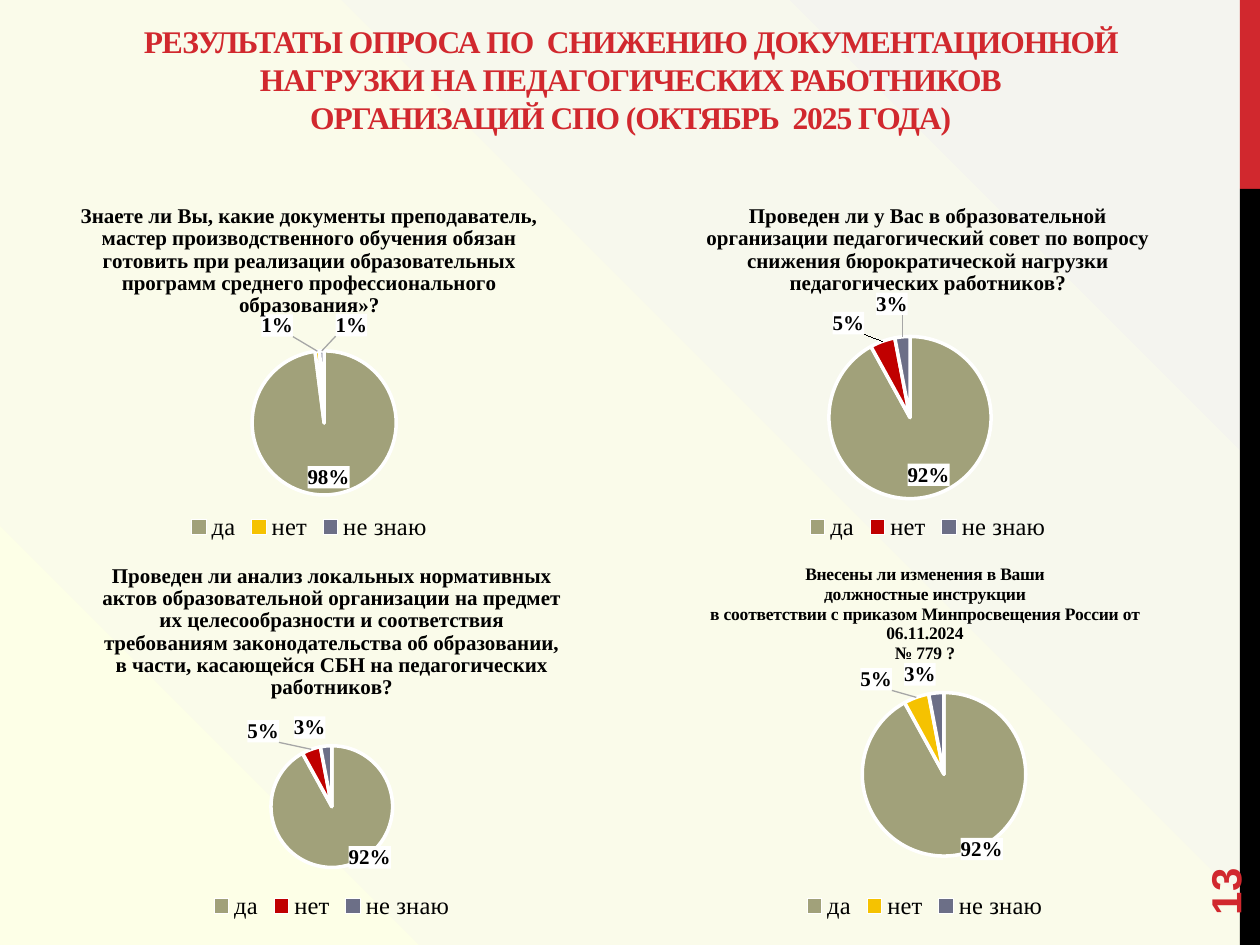
"""Build a slide with four survey pie charts."""
from copy import deepcopy

from pptx import Presentation
from pptx.chart.data import CategoryChartData
from pptx.dml.color import RGBColor
from pptx.enum.chart import XL_CHART_TYPE, XL_LABEL_POSITION, XL_LEGEND_POSITION
from pptx.enum.shapes import MSO_SHAPE
from pptx.enum.text import MSO_ANCHOR, PP_ALIGN
from pptx.oxml import parse_xml
from pptx.oxml.ns import nsdecls, qn
from pptx.util import Pt

RED = RGBColor(0xD1, 0x28, 0x2E)
BLACK = RGBColor(0, 0, 0)
WHITE = RGBColor(255, 255, 255)
OLIVE = RGBColor(0xA1, 0xA1, 0x7A)
GOLD = RGBColor(0xF5, 0xC2, 0x01)
DARK = RGBColor(0xC0, 0, 0)
SLATE = RGBColor(0x6C, 0x6F, 0x87)
GRAY = RGBColor(0xA6, 0xA6, 0xA6)
STOPS = ((0, RGBColor(0xFD, 0xFF, 0xE7)), (38, RGBColor(0xFA, 0xFB, 0xEA)),
         (99, RGBColor(0xF4, 0xF4, 0xEF)))

SERIF = "Times New Roman"
HEAD = ("РЕЗУЛЬТАТЫ ОПРОСА ПО  СНИЖЕНИЮ ДОКУМЕНТАЦИОННОЙ НАГРУЗКИ НА "
        "ПЕДАГОГИЧЕСКИХ РАБОТНИКОВ\nОРГАНИЗАЦИЙ СПО (ОКТЯБРЬ  2025 ГОДА)")
MOST = (0.92, 0.05, 0.03)
CHARTS = (
    dict(text="Знаете ли Вы, какие документы преподаватель, мастер производственного "
              "обучения обязан готовить при реализации образовательных программ "
              "среднего профессионального образования»?",
         box=(6.5, 105.8, 340.5, 206), area=(0.07, 0.46, 0.91, 0.4), size=12,
         vals=(0.98, 0.01, 0.01), no=GOLD, moves={1: (-0.04, -0.02), 2: (0.05, -0.02)}),
    dict(text="Проведен ли у Вас в образовательной организации педагогический совет "
              "по вопросу снижения бюрократической нагрузки педагогических работников?",
         box=(360, 105.8, 340.5, 206), area=(0.01, 0.42, 0.92, 0.45), size=12,
         vals=MOST, no=DARK, moves={2: (0.01, -0.04)}),
    dict(text="Проведен ли анализ локальных нормативных актов образовательной "
              "организации на предмет их целесообразности и соответствия требованиям "
              "законодательства об образовании, в части, касающейся СБН на "
              "педагогических работников?",
         box=(19.4, 311, 340.5, 217.4), area=(0, 0.53, 1, 0.32), size=12,
         vals=MOST, no=DARK, moves={0: (0, -0.07), 1: (-0.05, 0)}),
    dict(text="Внесены ли изменения в Ваши\nдолжностные инструкции\nв соответствии с "
              "приказом Минпросвещения России от 06.11.2024\n№ 779 ?",
         box=(371.5, 311, 314, 217.4), area=(0.09, 0.39, 0.89, 0.43), size=10,
         vals=MOST, no=GOLD, moves={0: (-0.01, -0.06), 1: (-0.04, 0)}),
)


def style(font, tone=BLACK, **vals):
    for key, val in vals.items():
        setattr(font, key, val)
    font.color.rgb = tone


def shade(slide):
    stops = "".join(f'<a:gs pos="{pos * 1000}"><a:srgbClr val="{tone}"/></a:gs>'
                    for pos, tone in STOPS)
    slide.element.find(qn("p:cSld")).insert(0, parse_xml(
        f'<p:bg {nsdecls("p", "a")}><p:bgPr><a:gradFill rotWithShape="1">'
        f'<a:gsLst>{stops}</a:gsLst><a:path path="circle">'
        '<a:fillToRect t="100000" r="100000"/></a:path></a:gradFill>'
        '<a:effectLst/></p:bgPr></p:bg>'))


def add_bar(slide, top, high, tone):
    bar = slide.shapes.add_shape(MSO_SHAPE.RECTANGLE, Pt(708.5), Pt(top), Pt(11.5), Pt(high))
    bar.shadow.inherit = False
    bar.fill.solid()
    bar.fill.fore_color.rgb = tone
    bar.line.fill.background()


def add_text(slide, box, text, form, side, **font):
    shape = slide.shapes.add_textbox(*map(Pt, box))
    frame = shape.text_frame
    for key, val in form.items():
        setattr(frame, key, val)
    frame.text = text
    for para in frame.paragraphs:
        para.alignment = side
        for run in para.runs:
            style(run.font, RED, bold=True, **font)
    return shape


def place(vals, inner=False):
    mode = '<c:layoutTarget val="inner"/>' * inner
    mode += '<c:xMode val="edge"/><c:yMode val="edge"/>' * inner
    spots = "".join(f'<c:{key} val="{val}"/>' for key, val in zip("xywh", vals))
    return parse_xml(f'<c:layout {nsdecls("c")}><c:manualLayout>{mode}{spots}'
                     '</c:manualLayout></c:layout>')


def add_marks(series, moves):
    marks = series.data_labels
    for key, val in dict(show_value=True, number_format="0%", position=XL_LABEL_POSITION.BEST_FIT,
                         number_format_is_linked=False).items():
        setattr(marks, key, val)
    style(marks.font, size=Pt(12), bold=True, name=SERIF)
    root = series._element.find(qn("c:dLbls"))
    root.find(qn("c:txPr")).addprevious(parse_xml(
        f'<c:spPr {nsdecls("c", "a")}><a:solidFill><a:srgbClr val="{WHITE}"/>'
        '</a:solidFill></c:spPr>'))
    parts = [part for part in root if "eader" not in part.tag]
    for at, (idx, move) in enumerate(moves.items()):
        mark = parse_xml(f'<c:dLbl {nsdecls("c")}><c:idx val="{idx}"/></c:dLbl>')
        mark.append(place(move))
        mark.extend(deepcopy(part) for part in parts)
        root.insert(at, mark)
    root.append(parse_xml(
        f'<c:leaderLines {nsdecls("c", "a")}><c:spPr><a:ln w="{Pt(0.75)}"><a:solidFill>'
        f'<a:srgbClr val="{GRAY}"/></a:solidFill></a:ln></c:spPr></c:leaderLines>'))


def add_pie(slide, text, box, area, size, vals, no, moves):
    data = CategoryChartData(number_format="0%")
    data.categories = ("да", "нет", "не знаю")
    data.add_series("Series 1", vals)
    chart = slide.shapes.add_chart(XL_CHART_TYPE.PIE, *map(Pt, box), data).chart
    style(chart.font, size=Pt(10), name="Arial")
    chart.has_title = chart.has_legend = True
    frame = chart.chart_title.text_frame
    frame.text = text
    for para in frame.paragraphs:
        for item in (para, *para.runs):
            style(item.font, size=Pt(size), bold=True, name=SERIF)
    legend = chart.legend
    legend.position = XL_LEGEND_POSITION.BOTTOM
    legend.include_in_layout = False
    style(legend.font, size=Pt(14), name=SERIF)
    plot = chart.plots[0]
    plot.vary_by_categories = True
    series = plot.series[0]
    for idx, tone in enumerate((OLIVE, no, SLATE)):
        form = series.points[idx].format
        form.fill.solid()
        form.fill.fore_color.rgb = tone
        form.line.color.rgb = WHITE
        form.line.width = Pt(2)
    add_marks(series, moves)
    field = chart._chartSpace.find(f'{qn("c:chart")}/{qn("c:plotArea")}')
    for old in field.findall(qn("c:layout")):
        field.remove(old)
    field.insert(0, place(area, inner=True))


def main():
    deck = Presentation()
    deck.slide_width, deck.slide_height = Pt(720), Pt(540)
    slide = deck.slides.add_slide(deck.slide_layouts[6])
    shade(slide)
    add_bar(slide, 0, 108, RED)
    add_bar(slide, 108, 432, BLACK)
    head = add_text(slide, (31, 10.8, 658.8, 70.6), HEAD,
                    dict(word_wrap=True, vertical_anchor=MSO_ANCHOR.BOTTOM),
                    PP_ALIGN.CENTER, size=Pt(18), name=SERIF)
    for para in head.text_frame.paragraphs:
        para.line_spacing = Pt(21.7)
        for run in para.runs:
            run.font._element.set("spc", "-60")
    page = add_text(slide, (648, 463.7, 103.7, 28.8), "13",
                    dict(word_wrap=True, vertical_anchor=MSO_ANCHOR.MIDDLE),
                    PP_ALIGN.LEFT, size=Pt(24), name="Arial")
    page.rotation = 270
    for chart in CHARTS:
        add_pie(slide, **chart)
    deck.save("out.pptx")


if __name__ == "__main__":
    main()
